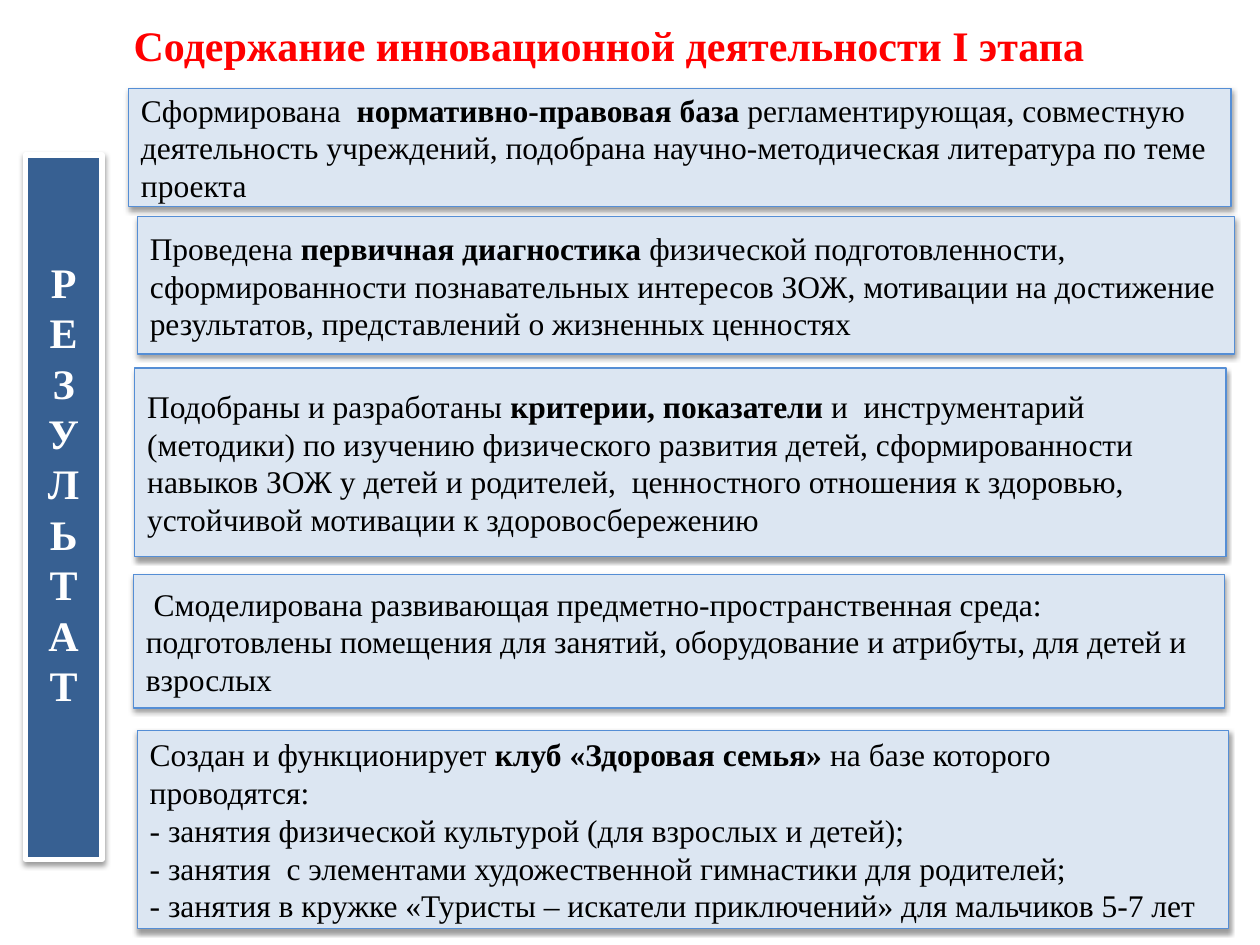
from lxml.etree import SubElement
from pptx import Presentation
from pptx.dml.color import RGBColor
from pptx.enum.shapes import MSO_SHAPE
from pptx.enum.text import MSO_ANCHOR, PP_ALIGN
from pptx.oxml.ns import qn
from pptx.util import Inches, Pt

FONT = "Times New Roman"
COLORS = {
    "title": "FF0000",
    "banner": "376092",
    "white": "FFFFFF",
    "card": "DCE6F2",
    "card_line": "558ED5",
    "black": "000000",
}

RESULTS = [
    ((1.02, 0.7, 8.75, 0.94), [
        [("Сформирована  ", False), ("нормативно-правовая база", True),
         (" регламентирующая, совместную деятельность учреждений, подобрана "
          "научно-методическая литература по теме проекта", False)],
    ]),
    ((1.09, 1.72, 8.71, 1.09), [
        [("Проведена ", False), ("первичная диагностика ", True),
         ("физической подготовленности, сформированности познавательных интересов ЗОЖ, "
          "мотивации на достижение результатов, представлений о жизненных ценностях", False)],
    ]),
    ((1.07, 2.92, 8.66, 1.5), [
        [("Подобраны и разработаны ", False), ("критерии, показатели", True),
         (" и  инструментарий (методики) по изучению физического развития детей, "
          "сформированности навыков ЗОЖ у детей и родителей,  ценностного отношения "
          "к здоровью,  устойчивой мотивации к здоровосбережению", False)],
    ]),
    ((1.06, 4.56, 8.66, 1.06), [
        [(" Смоделирована развивающая предметно-пространственная среда: подготовлены "
          "помещения для занятий, оборудование и атрибуты, для детей и взрослых", False)],
    ]),
    ((1.09, 5.8, 8.66, 1.57), [
        [("Создан и функционирует ", False), ("клуб «Здоровая семья»", True),
         (" на базе которого проводятся:", False)],
        [("- занятия физической культурой (для взрослых и детей);", False)],
        [("- занятия  с элементами художественной гимнастики для родителей;", False)],
        [("- занятия в кружке «Туристы – искатели приключений» для мальчиков 5-7 лет", False)],
    ]),
]


def color(name):
    return RGBColor.from_string(COLORS[name])


def add_shadow(shape):
    shape.shadow.inherit = False
    effects = shape._element.spPr.find(qn("a:effectLst"))
    shadow = SubElement(effects, qn("a:outerShdw"), blurRad=str(Pt(3.1)),
                        dist=str(Pt(1.6)), dir="5400000", rotWithShape="0")
    shade = SubElement(shadow, qn("a:srgbClr"), val=COLORS["black"])
    SubElement(shade, qn("a:alpha"), val="38000")


def add_panel(slide, box, fill, line, line_width):
    shape = slide.shapes.add_shape(MSO_SHAPE.RECTANGLE, *map(Inches, box))
    shape.fill.solid()
    shape.fill.fore_color.rgb = color(fill)
    shape.line.color.rgb = color(line)
    shape.line.width = Pt(line_width)
    add_shadow(shape)
    return shape


def write_text(frame, paragraphs, size, text_color, alignment):
    frame.word_wrap = True
    frame.vertical_anchor = MSO_ANCHOR.MIDDLE
    for index, runs in enumerate(paragraphs):
        paragraph = frame.add_paragraph() if index else frame.paragraphs[0]
        paragraph.alignment = alignment
        paragraph.font.name = FONT
        paragraph.font.size = Pt(size)
        paragraph.font.color.rgb = color(text_color)
        for text, bold in runs:
            run = paragraph.add_run()
            run.text = text
            run.font.bold = bold


def add_title(slide, box, text):
    shape = slide.shapes.add_textbox(*map(Inches, box))
    write_text(shape.text_frame, [[(text, True)]], 24, "title", PP_ALIGN.CENTER)


def add_banner(slide, box, word):
    shape = add_panel(slide, box, "banner", "white", 3)
    shape.text_frame.margin_bottom = Inches(0.43)
    letters = [[(letter, True)] for letter in word]
    write_text(shape.text_frame, letters, 24, "white", PP_ALIGN.CENTER)


def add_result(slide, box, paragraphs):
    shape = add_panel(slide, box, "card", "card_line", 0.75)
    write_text(shape.text_frame, paragraphs, 18, "black", PP_ALIGN.LEFT)


def main():
    presentation = Presentation()
    presentation.slide_width = Inches(10)
    presentation.slide_height = Inches(7.5)
    slide = presentation.slides.add_slide(presentation.slide_layouts[6])
    add_title(slide, (0.78, 0, 8.19, 0.71), "Содержание инновационной деятельности I этапа ")
    add_banner(slide, (0.2, 1.23, 0.61, 5.59), "РЕЗУЛЬТАТ")
    for box, paragraphs in RESULTS:
        add_result(slide, box, paragraphs)
    presentation.save("out.pptx")


if __name__ == "__main__":
    main()
